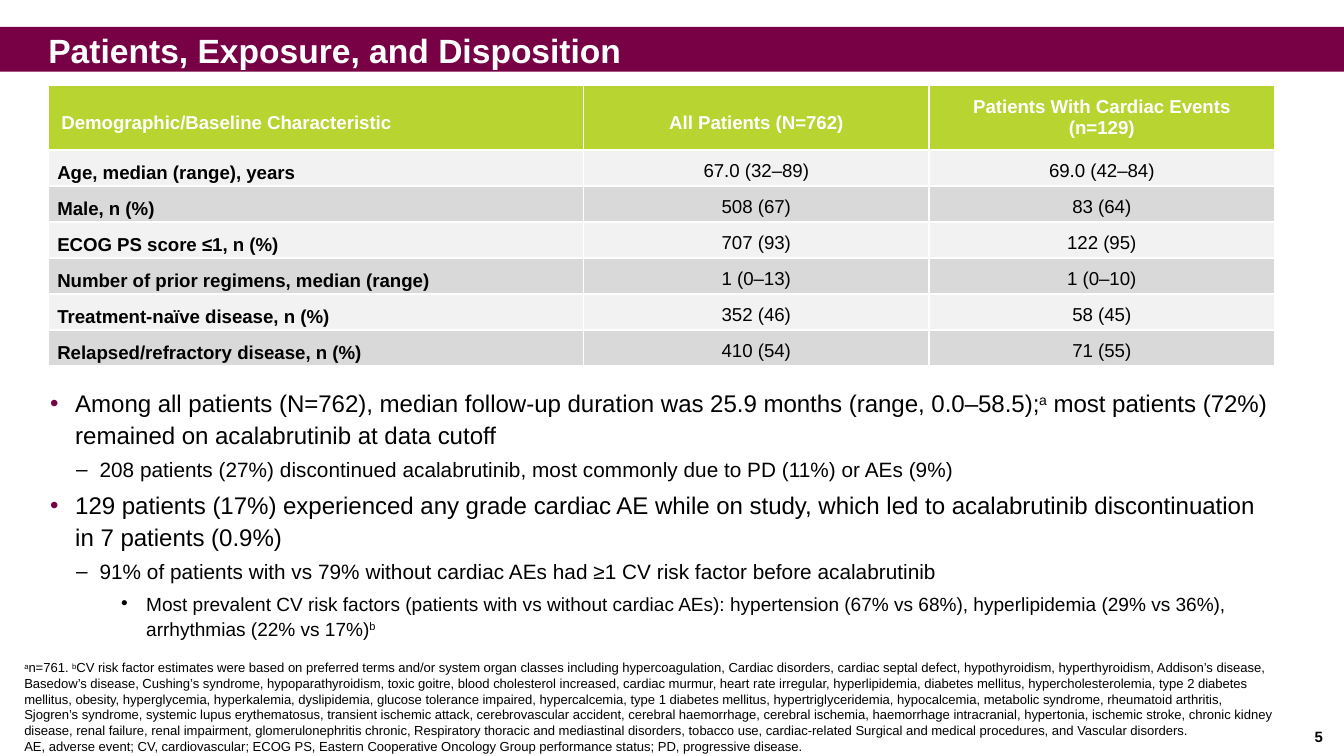
import pptx
import pptx.dml.color
import pptx.enum.shapes
import pptx.enum.text
import pptx.oxml
import pptx.oxml.ns
import pptx.util

Pt = pptx.util.Pt
ALIGN = pptx.enum.text.PP_ALIGN
ANCHOR = pptx.enum.text.MSO_ANCHOR

PLUM, LIME, WHITE, BLACK = "780045", "B8D431", "FFFFFF", "000000"
BANDS = ("F2F2F2", "D9D9D9")

TITLE = "Patients, Exposure, and Disposition"
PAGE_NUMBER = "5"
HEADINGS = (
    "Demographic/Baseline Characteristic",
    "All Patients (N=762)",
    "Patients With Cardiac Events\n(n=129)",
)
CHARACTERISTICS = (
    ("Age, median (range), years", "67.0 (32–89)", "69.0 (42–84)"),
    ("Male, n (%)", "508 (67)", "83 (64)"),
    ("ECOG PS score ≤1, n (%)", "707 (93)", "122 (95)"),
    ("Number of prior regimens, median (range)", "1 (0–13)", "1 (0–10)"),
    ("Treatment-naïve disease, n (%)", "352 (46)", "58 (45)"),
    ("Relapsed/refractory disease, n (%)", "410 (54)", "71 (55)"),
)
FINDINGS = (
    (0, "Among all patients (N=762), median follow-up duration was 25.9 months (range, 0.0–58.5);^a^ "
        "most patients (72%) remained on acalabrutinib at data cutoff"),
    (1, "208 patients (27%) discontinued acalabrutinib, most commonly due to PD (11%) or AEs (9%)"),
    (0, "129 patients (17%) experienced any grade cardiac AE while on study, which led to "
        "acalabrutinib discontinuation in 7 patients (0.9%)"),
    (1, "91% of patients with vs 79% without cardiac AEs had ≥1 CV risk factor before acalabrutinib"),
    (2, "Most prevalent CV risk factors (patients with vs without cardiac AEs): hypertension "
        "(67% vs 68%), hyperlipidemia (29% vs 36%), arrhythmias (22% vs 17%)^b^"),
)
RISK_FACTORS = (
    "hypercoagulation, Cardiac disorders, cardiac septal defect, hypothyroidism, hyperthyroidism",
    "Addison’s disease, Basedow’s disease, Cushing’s syndrome, hypoparathyroidism, toxic goitre",
    "blood cholesterol increased, cardiac murmur, heart rate irregular, hyperlipidemia",
    "diabetes mellitus, hypercholesterolemia, type 2 diabetes mellitus, obesity, hyperglycemia",
    "hyperkalemia, dyslipidemia, glucose tolerance impaired, hypercalcemia, type 1 diabetes mellitus",
    "hypertriglyceridemia, hypocalcemia, metabolic syndrome, rheumatoid arthritis",
    "Sjogren’s syndrome, systemic lupus erythematosus, transient ischemic attack",
    "cerebrovascular accident, cerebral haemorrhage, cerebral ischemia, haemorrhage intracranial",
    "hypertonia, ischemic stroke, chronic kidney disease, renal failure, renal impairment",
    "glomerulonephritis chronic, Respiratory thoracic and mediastinal disorders, tobacco use",
    "cardiac-related Surgical and medical procedures, and Vascular disorders.",
)
FOOTNOTES = (
    "^a^n=761. ^b^CV risk factor estimates were based on preferred terms and/or system organ classes "
    "including " + ", ".join(RISK_FACTORS),
    "AE, adverse event; CV, cardiovascular; ECOG PS, Eastern Cooperative Oncology Group performance "
    "status; PD, progressive disease.",
)
LEVELS = (
    {"size": 12.9, "left": 18, "hang": 13.5, "mark": "•", "color": PLUM},
    {"size": 11.1, "left": 31, "hang": 12.5, "mark": "–", "color": BLACK},
    {"size": 10.2, "left": 56, "hang": 13.5, "mark": "•", "color": BLACK},
)
COLUMN_WIDTHS = (286.9, 185.1, 185.1)
HEADER_HEIGHT, ROW_HEIGHT = 35, 19.3
NO_MARGINS = dict.fromkeys(("margin_left", "margin_top", "margin_right", "margin_bottom"), 0)


def set_values(target, values):
    """Set each attribute of target from a dict."""
    for name, value in values.items():
        setattr(target, name, value)


def rgb(color):
    """Turn a hex string into a colour."""
    return pptx.dml.color.RGBColor.from_string(color)


def paint(target, color):
    """Give a shape or cell a solid fill."""
    target.fill.solid()
    target.fill.fore_color.rgb = rgb(color)


def add_xml(parent, body):
    """Append a drawing element given as XML."""
    tag, rest = body.split(" ", 1)
    parent.append(pptx.oxml.parse_xml(f"<{tag} {pptx.oxml.ns.nsdecls('a')} {rest}"))


def write(para, text, size, color=BLACK, bold=False, **layout):
    """Write text into a paragraph, raising the parts between carets."""
    set_values(para, layout)
    for index, part in enumerate(text.split("^")):
        if part:
            span = para.add_run()
            span.text = part
            set_values(span.font, {"name": "Arial", "size": Pt(size), "bold": bold})
            span.font.color.rgb = rgb(color)
            if index % 2:
                span._r.get_or_add_rPr().set("baseline", "30000")


def paragraphs(frame, texts):
    """Yield one paragraph of the frame for each text."""
    for index, text in enumerate(texts):
        yield (frame.add_paragraph() if index else frame.paragraphs[0]), text


def add_box(page, left, top, width, height):
    """Add a wrapping text box without margins and return its frame."""
    frame = page.shapes.add_textbox(Pt(left), Pt(top), Pt(width), Pt(height)).text_frame
    set_values(frame, {"word_wrap": True, **NO_MARGINS})
    return frame


def add_title(page):
    """Place the title on its plum band."""
    title = page.shapes.title
    band = page.shapes.add_shape(
        pptx.enum.shapes.MSO_SHAPE.RECTANGLE, 0, Pt(14.4), Pt(720), Pt(24))
    paint(band, PLUM)
    band.line.fill.background()
    band.shadow.inherit = False
    title.element.addprevious(band.element)
    set_values(title, {"left": Pt(18.7), "top": Pt(11.5), "width": Pt(690), "height": Pt(24.5)})
    set_values(title.text_frame, {
        "word_wrap": True, "vertical_anchor": ANCHOR.TOP,
        "auto_size": pptx.enum.text.MSO_AUTO_SIZE.NONE})
    write(title.text_frame.paragraphs[0], TITLE, 18, WHITE, True,
          alignment=ALIGN.LEFT, line_spacing=Pt(22.5))


def add_table(page):
    """Add the table of baseline characteristics."""
    rows = (HEADINGS,) + CHARACTERISTICS
    heights = [HEADER_HEIGHT] + [ROW_HEIGHT] * len(CHARACTERISTICS)
    table = page.shapes.add_table(
        len(rows), len(HEADINGS), Pt(25.7), Pt(45.4),
        Pt(sum(COLUMN_WIDTHS)), Pt(sum(heights))).table
    for column, width in zip(table.columns, COLUMN_WIDTHS):
        column.width = Pt(width)
    for r, (texts, height) in enumerate(zip(rows, heights)):
        table.rows[r].height = Pt(height)
        for c, text in enumerate(texts):
            cell = table.cell(r, c)
            header, label = r == 0, c == 0
            if not header:
                set_values(cell, {**NO_MARGINS, "margin_left": Pt(5), "margin_right": Pt(5)})
            cell.vertical_anchor = ANCHOR.MIDDLE if header or label else ANCHOR.TOP
            for side in "LRTB":
                add_xml(cell._tc.get_or_add_tcPr(),
                        f'a:ln{side} w="12700"><a:solidFill><a:srgbClr val="{WHITE}"/>'
                        f'</a:solidFill></a:ln{side}>')
            paint(cell, LIME if header else BANDS[(r - 1) % 2])
            lines = text.split("\n")
            for para, line in paragraphs(cell.text_frame, lines):
                write(para, line, 10, WHITE if header else BLACK, header or label,
                      alignment=ALIGN.LEFT if label else ALIGN.CENTER,
                      line_spacing=1.5 if len(lines) == 1 else 1.0)


def add_findings(page):
    """Add the bulleted findings."""
    frame = add_box(page, 22.3, 206.6, 661.7, 139.7)
    for para, (level, text) in paragraphs(frame, FINDINGS):
        style = LEVELS[level]
        write(para, text, style["size"], level=level, line_spacing=1.1, space_before=Pt(3))
        properties = para._p.get_or_add_pPr()
        properties.set("marL", str(Pt(style["left"])))
        properties.set("indent", str(-Pt(style["hang"])))
        add_xml(properties, f'a:buClr ><a:srgbClr val="{style["color"]}"/></a:buClr>')
        add_xml(properties, 'a:buFont typeface="Arial"/>')
        add_xml(properties, f'a:buChar char="{style["mark"]}"/>')


def main():
    """Build the slide and save it."""
    deck = pptx.Presentation()
    set_values(deck, {"slide_width": Pt(720), "slide_height": Pt(405)})
    page = deck.slides.add_slide(deck.slide_layouts[5])
    add_title(page)
    add_table(page)
    add_findings(page)
    for para, text in paragraphs(add_box(page, 13, 353.5, 670.3, 51), FOOTNOTES):
        write(para, text, 7)
    write(add_box(page, 704.2, 390, 15, 13).paragraphs[0], PAGE_NUMBER, 8, bold=True)
    deck.save("out.pptx")


if __name__ == "__main__":
    main()
